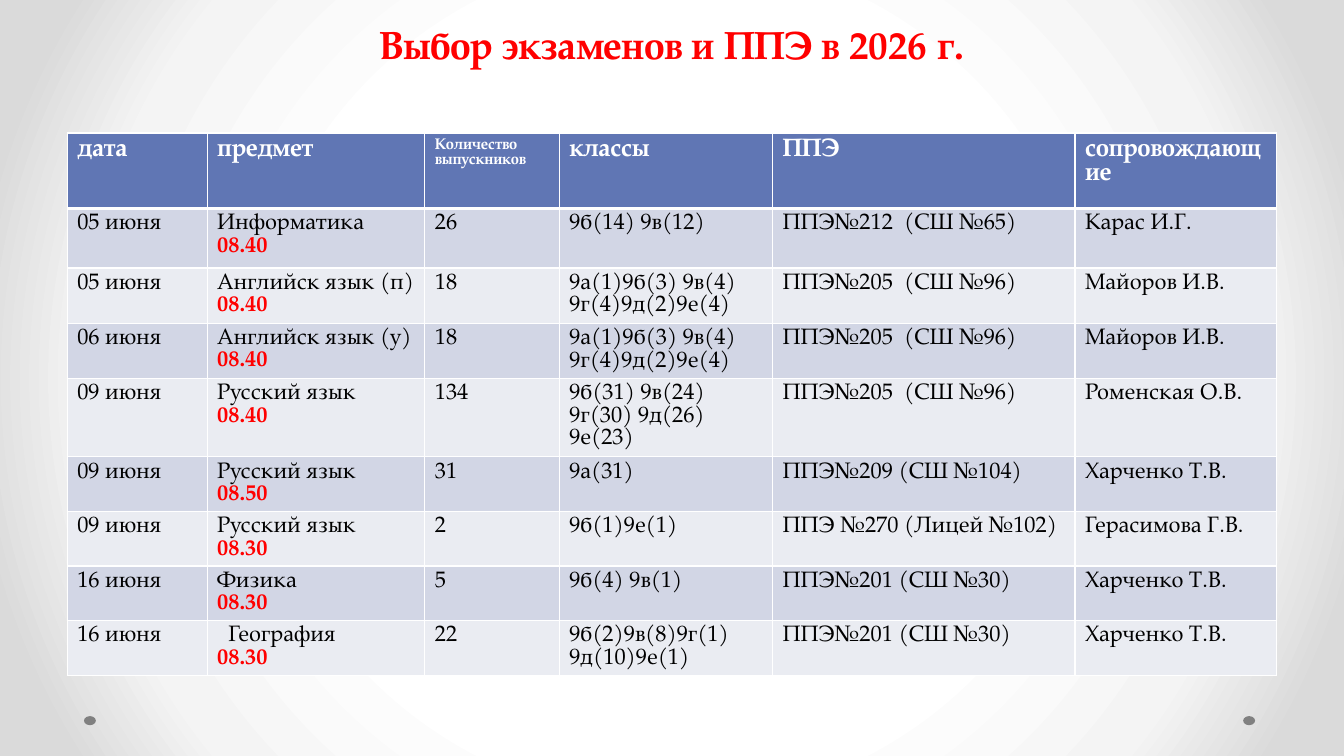
from lxml.etree import SubElement
from pptx import Presentation
from pptx.dml.color import RGBColor
from pptx.enum.shapes import MSO_SHAPE as Shape
from pptx.enum.text import MSO_ANCHOR as Anchor, MSO_AUTO_SIZE as AutoSize, PP_ALIGN as Align
from pptx.oxml import parse_xml
from pptx.oxml.ns import nsdecls, qn
from pptx.util import Pt

FONT = "TeX Gyre Pagella"
RED = RGBColor(0xFF, 0x00, 0x00)
BLACK = RGBColor(0x00, 0x00, 0x00)
WHITE = RGBColor(0xFF, 0xFF, 0xFF)
GRAY = RGBColor(0x80, 0x80, 0x80)
HEADER_BLUE = RGBColor(0x60, 0x76, 0xB4)
BANDS = [RGBColor(0xD2, 0xD6, 0xE5), RGBColor(0xEA, 0xEC, 0xF2)]
BACKGROUND_STOPS = [
    (50, WHITE),
    (76, RGBColor(0xF4, 0xF4, 0xF4)),
    (92, RGBColor(0xDA, 0xDA, 0xDA)),
]

COLUMN_WIDTHS = [100, 155.5, 96, 152.5, 216, 144]
ROW_HEIGHTS = [54, 42.5, 39, 39, 56, 39, 39, 39, 39]
SUBJECT_COLUMN = 1
COUNT_COLUMN = 2
HEADERS = ["дата", "предмет", "Количество выпускников", "классы", "ППЭ", "сопровождающие"]
EXAMS = [
    ["05 июня", "Информатика\n08.40", "26", "9б(14) 9в(12)",
     "ППЭ№212  (СШ №65)", "Карас И.Г."],
    ["05 июня", "Английск язык (п)\n08.40", "18", "9а(1)9б(3) 9в(4)\n9г(4)9д(2)9е(4)",
     "ППЭ№205  (СШ №96)", "Майоров И.В."],
    ["06 июня", "Английск язык (у)\n08.40", "18", "9а(1)9б(3) 9в(4)\n9г(4)9д(2)9е(4)",
     "ППЭ№205  (СШ №96)", "Майоров И.В."],
    ["09 июня", "Русский язык\n08.40", "134", "9б(31) 9в(24)\n9г(30) 9д(26) 9е(23)",
     "ППЭ№205  (СШ №96)", "Роменская О.В."],
    ["09 июня", "Русский язык\n08.50", "31", "9а(31)",
     "ППЭ№209 (СШ №104)", "Харченко Т.В."],
    ["09 июня", "Русский язык\n08.30", "2", "9б(1)9е(1)",
     "ППЭ №270 (Лицей №102)", "Герасимова Г.В."],
    ["16 июня", "Физика\n08.30", "5", "9б(4) 9в(1)",
     "ППЭ№201 (СШ №30)", "Харченко Т.В."],
    ["16 июня", "География\n08.30", "22", "9б(2)9в(8)9г(1)\n9д(10)9е(1)",
     "ППЭ№201 (СШ №30)", "Харченко Т.В."],
]


def set_font(paragraph, size, color, bold):
    font = paragraph.font
    font.name, font.size, font.bold = FONT, Pt(size), bold
    font.color.rgb = color


def paint_background(slide):
    stops = "".join(
        f'<a:gs pos="{position * 1000}"><a:srgbClr val="{color}"/></a:gs>'
        for position, color in BACKGROUND_STOPS
    )
    slide.background.fill.solid()
    properties = slide.element.find(".//" + qn("p:bgPr"))
    gradient = parse_xml(
        f'<a:gradFill {nsdecls("a")} rotWithShape="1"><a:gsLst>{stops}</a:gsLst>'
        '<a:path path="circle"><a:fillToRect l="50000" t="50000" r="50000" b="50000"/>'
        "</a:path></a:gradFill>"
    )
    properties.replace(properties.find(qn("a:solidFill")), gradient)


def add_corner_dots(slide, left, top, width, height):
    dot_width = 8.5
    for dot_left in (left, left + width - dot_width):
        dot = slide.shapes.add_shape(
            Shape.OVAL, Pt(dot_left), Pt(top), Pt(dot_width), Pt(height))
        dot.shadow.inherit = False
        dot.fill.solid()
        dot.fill.fore_color.rgb = GRAY
        dot.line.fill.background()


def add_title(slide, left, top, width, height):
    title = slide.shapes.title
    title.left, title.top, title.width, title.height = map(Pt, (left, top, width, height))
    frame = title.text_frame
    frame.text = "Выбор экзаменов и ППЭ в 2026 г."
    frame.auto_size = AutoSize.NONE
    frame.word_wrap = True
    frame.vertical_anchor = Anchor.BOTTOM
    paragraph = frame.paragraphs[0]
    paragraph.alignment = Align.CENTER
    paragraph.line_spacing = Pt(58)
    set_font(paragraph, 28, RED, True)


def set_borders(cell, top=1, bottom=1):
    properties = cell._tc.get_or_add_tcPr()
    for tag, width in (("lnL", 1), ("lnR", 1), ("lnT", top), ("lnB", bottom)):
        line = SubElement(properties, qn(f"a:{tag}"), w=str(Pt(width)))
        fill = SubElement(line, qn("a:solidFill"))
        SubElement(fill, qn("a:srgbClr"), val=str(WHITE))


def fill_cell(cell, text, color):
    cell.text = text
    cell.fill.solid()
    cell.fill.fore_color.rgb = color


def add_exam_table(slide, left, top, width, height):
    table = slide.shapes.add_table(
        len(ROW_HEIGHTS), len(COLUMN_WIDTHS), Pt(left), Pt(top), Pt(width), Pt(height)).table
    table.horz_banding = False
    for column, column_width in zip(table.columns, COLUMN_WIDTHS):
        column.width = Pt(column_width)
    for row, row_height in zip(table.rows, ROW_HEIGHTS):
        row.height = Pt(row_height)

    for column, text in enumerate(HEADERS):
        cell = table.cell(0, column)
        set_borders(cell, bottom=3)
        fill_cell(cell, text, HEADER_BLUE)
        size = 11 if column == COUNT_COLUMN else 18
        set_font(cell.text_frame.paragraphs[0], size, WHITE, True)

    for row, exam in enumerate(EXAMS, start=1):
        for column, text in enumerate(exam):
            cell = table.cell(row, column)
            set_borders(cell, top=3 if row == 1 else 1)
            fill_cell(cell, text, BANDS[(row - 1) % 2])
            for index, paragraph in enumerate(cell.text_frame.paragraphs):
                is_time = column == SUBJECT_COLUMN and index == 1
                set_font(paragraph, 16, RED if is_time else BLACK, is_time)

    geography = table.cell(len(EXAMS), SUBJECT_COLUMN).text_frame.paragraphs[0]
    geography._p.get_or_add_pPr().set("marL", str(Pt(8)))


def build_exam_slide(presentation):
    slide = presentation.slides.add_slide(presentation.slide_layouts[5])
    paint_background(slide)
    add_corner_dots(slide, 60, 511.5, 836.5, 6.5)
    add_title(slide, 48, 0, 864, 52)
    add_exam_table(slide, 48, 95, sum(COLUMN_WIDTHS), sum(ROW_HEIGHTS))


def main():
    presentation = Presentation()
    presentation.slide_width, presentation.slide_height = Pt(960), Pt(540)
    build_exam_slide(presentation)
    presentation.save("out.pptx")


if __name__ == "__main__":
    main()
